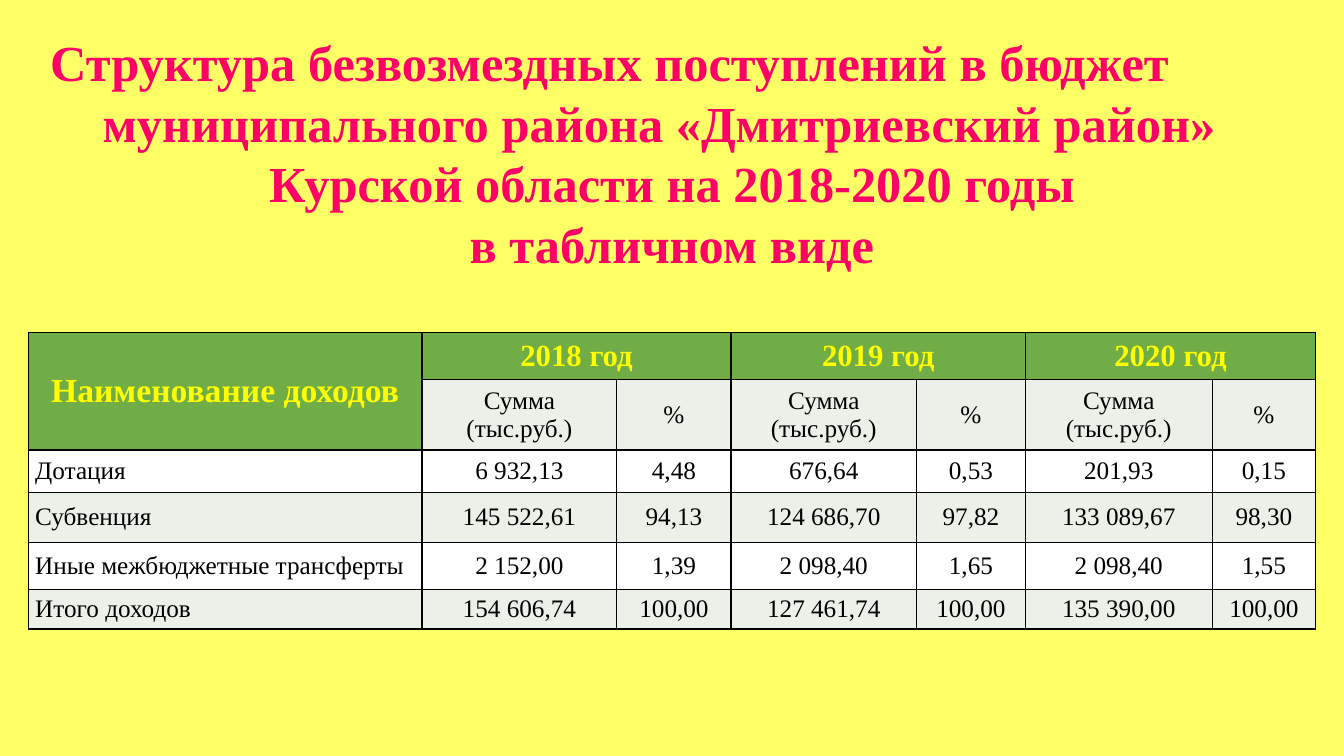
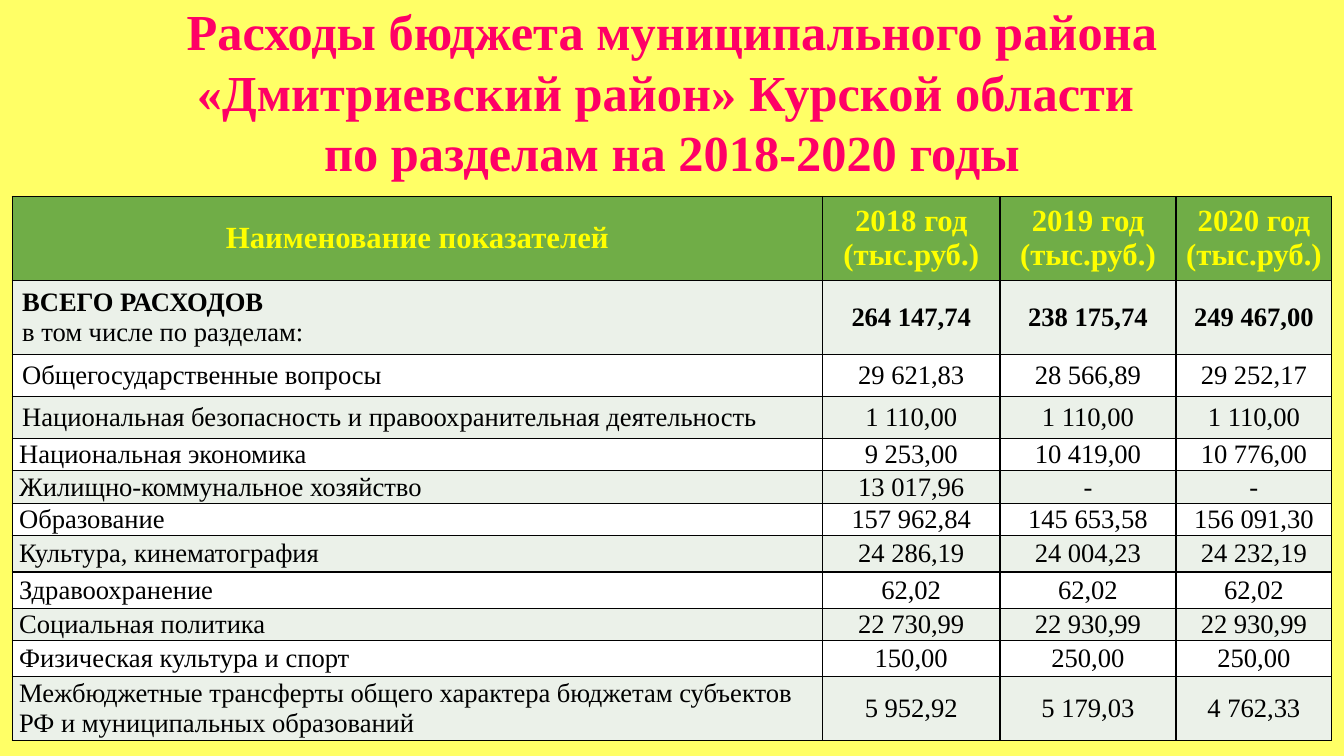
from lxml import etree
from pptx import Presentation
from pptx.dml.color import RGBColor
from pptx.enum.text import MSO_ANCHOR, PP_ALIGN
from pptx.oxml.ns import qn
from pptx.util import Inches, Pt

LEFT, CENTER = PP_ALIGN.LEFT, PP_ALIGN.CENTER
MIDDLE = MSO_ANCHOR.MIDDLE

PAGE = RGBColor(0xFF, 0xFF, 0x66)
PINK = RGBColor(0xFF, 0x00, 0x66)
GREEN = RGBColor(0x70, 0xAD, 0x47)
YELLOW = RGBColor(0xFF, 0xFF, 0x00)
MINT = RGBColor(0xEB, 0xF1, 0xE9)
WHITE = RGBColor(0xFF, 0xFF, 0xFF)
BLACK = RGBColor(0x00, 0x00, 0x00)

FONT = "Times New Roman"
TITLE_SIZE, HEAD_SIZE = 36, 22
TITLE_PITCH = Pt(43.2)
GRID = 100


class Deck:
    def __init__(self):
        self.prs = Presentation()
        self.prs.slide_width = Inches(13.33)
        self.prs.slide_height = Inches(7.5)
        self.s = None

    def x(self, columns):
        return round(self.prs.slide_width * columns / GRID)

    def y(self, rows):
        return round(self.prs.slide_height * rows / GRID)

    def slide(self):
        self.s = self.prs.slides.add_slide(self.prs.slide_layouts[6])
        fill = self.s.background.fill
        fill.solid()
        fill.fore_color.rgb = PAGE

    def run(self, p, text, size, color, bold):
        r = p.add_run()
        r.text = text
        r.font.name = FONT
        r.font.size = Pt(size)
        r.font.bold = bold
        r.font.color.rgb = color

    def title(self, top, height, lines):
        sp = self.s.shapes.add_textbox(0, self.y(top), self.x(GRID), self.y(height))
        tf = sp.text_frame
        tf.word_wrap = True
        tf.vertical_anchor = MIDDLE
        for i, (text, indent) in enumerate(lines):
            p = tf.add_paragraph() if i else tf.paragraphs[0]
            p.line_spacing = TITLE_PITCH
            p.alignment = LEFT if indent else CENTER
            if indent:
                p._p.get_or_add_pPr().set("marL", str(self.x(indent)))
            self.run(p, text, TITLE_SIZE, PINK, True)

    def borders(self, cell):
        tcPr = cell._tc.get_or_add_tcPr()
        for side in ("lnL", "lnR", "lnT", "lnB"):
            ln = etree.SubElement(tcPr, qn(f"a:{side}"), w=str(Pt(1)))
            fill = etree.SubElement(ln, qn("a:solidFill"))
            etree.SubElement(fill, qn("a:srgbClr"), val=str(BLACK))

    def cell(self, cell, text, fill, color, size, bold, align, roomy):
        self.borders(cell)
        cell.fill.solid()
        cell.fill.fore_color.rgb = fill
        cell.vertical_anchor = MIDDLE
        if not roomy:
            cell.margin_left = cell.margin_right = Inches(0.07)
            cell.margin_top = cell.margin_bottom = 0
        tf = cell.text_frame
        for i, line in enumerate(text.split("\n")):
            p = tf.add_paragraph() if i else tf.paragraphs[0]
            p.alignment = align
            if line:
                self.run(p, line, size, color, bold and i == 0)

    def table(self, left, top, widths, heights, data, size,
              corner_size=HEAD_SIZE, merges=(), roomy=(), bold_rows=()):
        tbl = self.s.shapes.add_table(
            len(heights), len(widths), self.x(left), self.y(top),
            self.x(sum(widths)), self.y(sum(heights))).table
        tbl.first_row = tbl.horz_banding = False
        for column, width in zip(tbl.columns, widths):
            column.width = self.x(width)
        for row, height in zip(tbl.rows, heights):
            row.height = self.y(height)
        for first, last in merges:
            tbl.cell(*first).merge(tbl.cell(*last))
        for i, values in enumerate(data):
            for j, text in enumerate(values):
                align = LEFT if i and j == 0 else CENTER
                if i == 0:
                    style = (GREEN, YELLOW, HEAD_SIZE if j else corner_size, True)
                else:
                    style = (MINT if i % 2 else WHITE, BLACK, size, i in bold_rows)
                self.cell(tbl.cell(i, j), text, *style, align,
                          i == 0 or (i, j) in roomy)


def main():
    deck = Deck()
    years = ("2018 год", "2019 год", "2020 год")

    deck.slide()
    deck.title(3.2, 33.9, [
        ("Структура безвозмездных поступлений в бюджет", 3),
        ("муниципального района «Дмитриевский район»", 6.9),
        ("Курской области на 2018-2020 годы", 0),
        ("в табличном виде", 0),
    ])
    income = [
        ["Наименование доходов"] + [t for year in years for t in (year, "")],
        [""] + ["Сумма (тыс.руб.)", "%"] * len(years),
        ["Дотация", "6 932,13", "4,48", "676,64", "0,53", "201,93", "0,15"],
        ["Субвенция", "145 522,61", "94,13", "124 686,70", "97,82", "133 089,67", "98,30"],
        ["Иные межбюджетные трансферты", "2 152,00", "1,39", "2 098,40", "1,65",
         "2 098,40", "1,55"],
        ["Итого доходов", "154 606,74", "100,00", "127 461,74", "100,00",
         "135 390,00", "100,00"],
    ]
    deck.table(
        2.1, 43.95, [29.3, 14.5, 8.5, 13.8, 8.1, 13.9, 7.7],
        [5.8, 8.7, 5.6, 6.6, 6.3, 5.2], income, 18, corner_size=24,
        merges=[((0, 0), (1, 0))] + [((0, j), (0, j + 1)) for j in (1, 3, 5)],
        roomy=[(1, j) for j in range(7)])

    deck.slide()
    deck.title(0, 24.1, [
        ("Расходы бюджета муниципального района", 0),
        ("«Дмитриевский район» Курской области ", 0),
        ("по разделам на 2018-2020 годы", 0),
    ])
    expenses = [
        ["Наименование показателей"] + [f"{year} (тыс.руб.)" for year in years],
        ["ВСЕГО РАСХОДОВ\nв том числе по разделам:",
         "264 147,74", "238 175,74", "249 467,00"],
        ["Общегосударственные вопросы", "29 621,83", "28 566,89", "29 252,17"],
        ["Национальная безопасность и правоохранительная деятельность",
         "1 110,00", "1 110,00", "1 110,00"],
        ["Национальная экономика", "9 253,00", "10 419,00", "10 776,00"],
        ["Жилищно-коммунальное хозяйство", "13 017,96", "-", "-"],
        ["Образование", "157 962,84", "145 653,58", "156 091,30"],
        ["Культура, кинематография", "24 286,19", "24 004,23", "24 232,19"],
        ["Здравоохранение", "62,02", "62,02", "62,02"],
        ["Социальная политика", "22 730,99", "22 930,99", "22 930,99"],
        ["Физическая культура и спорт", "150,00", "250,00", "250,00"],
        ["Межбюджетные трансферты общего характера бюджетам субъектов РФ "
         "и муниципальных образований", "5 952,92", "5 179,03", "4 762,33"],
    ]
    deck.table(
        0.9, 26, [60.3, 13.2, 13.1, 11.6],
        [10.3, 9.1, 5.2, 5.2, 3.9, 4.4, 3.9, 4.8, 4.8, 3.9, 4.8, 7.8],
        expenses, 19, roomy=[(i, 0) for i in (1, 2, 3)], bold_rows=(1,))

    deck.prs.save("out.pptx")


if __name__ == "__main__":
    main()
